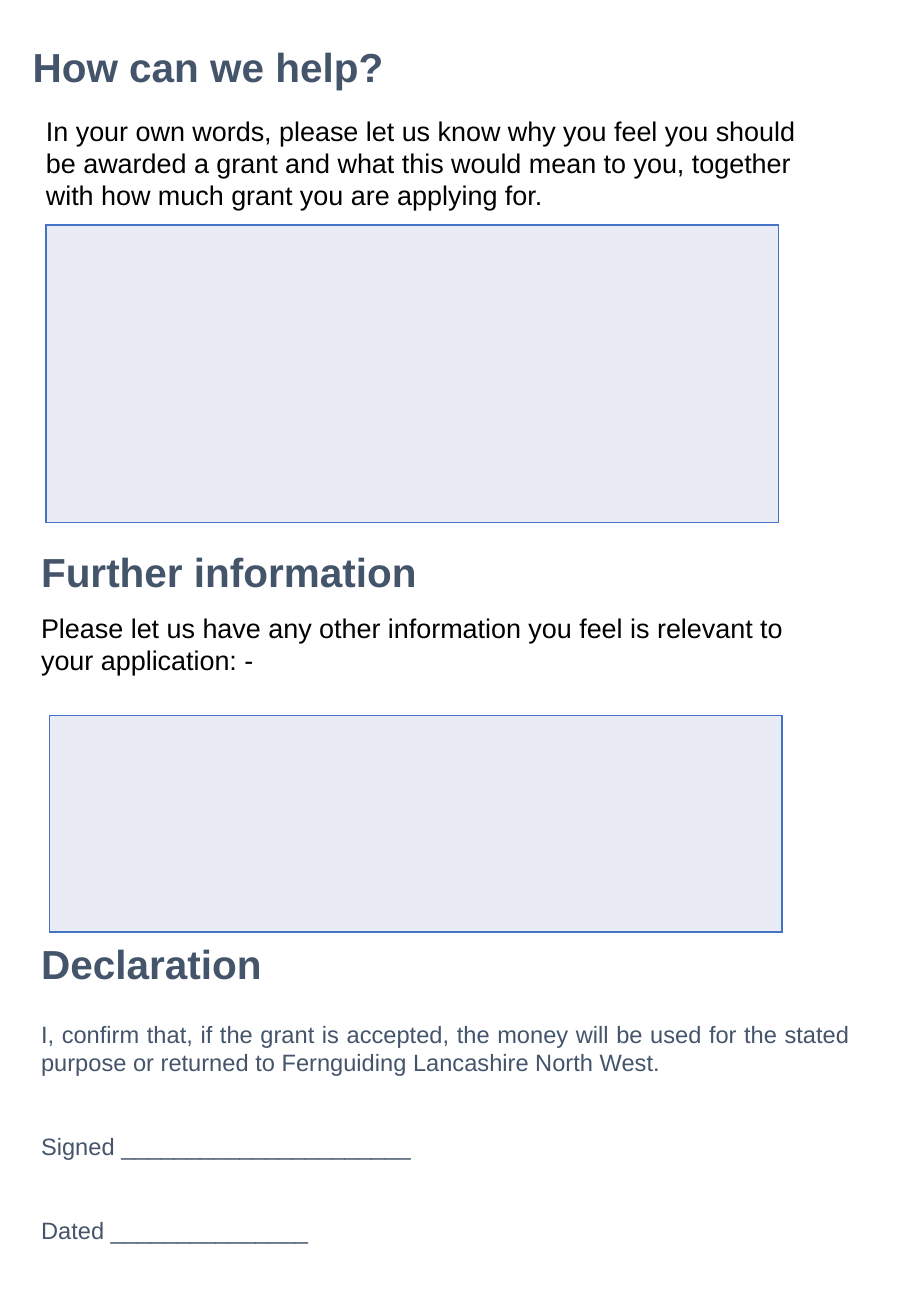
from lxml.etree import SubElement
from pptx import Presentation
from pptx.dml.color import RGBColor
from pptx.enum.text import MSO_ANCHOR, PP_ALIGN
from pptx.oxml.ns import qn
from pptx.util import Pt

NAVY, BLACK, BLUE, PALE = "44546A", "000000", "4472C4", "E9EBF5"
WIDE = 465.84


def color(hue):
    return RGBColor.from_string(hue)


def write(para, text, size=16, hue=BLACK, bold=False, align=None,
          line=None, before=None):
    run = para.add_run()
    run.text = text
    font = run.font
    font.name, font.size, font.bold = "Arial", Pt(size), bold
    font.color.rgb = color(hue)
    if align is not None:
        para.alignment = align
    if line is not None:
        para.line_spacing = line
    if before is not None:
        para.space_before = Pt(before)


class Form:
    def __init__(self, deck):
        self.slide = deck.slides.add_slide(deck.slide_layouts[6])

    def text(self, left, top, wide, high, lines, anchor=MSO_ANCHOR.TOP,
             gap=None, **style):
        box = self.slide.shapes.add_textbox(Pt(left), Pt(top), Pt(wide), Pt(high))
        frame = box.text_frame
        frame.word_wrap = True
        frame.vertical_anchor = anchor
        for i, line in enumerate(lines):
            para = frame.add_paragraph() if i else frame.paragraphs[0]
            write(para, line, before=gap if i else None, **style)

    def title(self, left, top, text):
        self.text(left, top, WIDE, 46.08, [text], anchor=MSO_ANCHOR.MIDDLE,
                  size=24, hue=NAVY, bold=True, line=0.9)

    def field(self, left, top, high):
        wide = 434.16
        table = self.slide.shapes.add_table(
            1, 1, Pt(left), Pt(top), Pt(wide), Pt(high)).table
        table.first_row = table.horz_banding = False
        cell = table.cell(0, 0)
        # Borders come before the fill in the cell's XML
        props = cell._tc.get_or_add_tcPr()
        for side in ("lnL", "lnR", "lnT", "lnB"):
            edge = SubElement(props, qn("a:" + side), w=str(Pt(1)))
            fill = SubElement(edge, qn("a:solidFill"))
            SubElement(fill, qn("a:srgbClr"), val=BLUE)
        cell.fill.solid()
        cell.fill.fore_color.rgb = color(PALE)


def main():
    deck = Presentation()
    deck.slide_width, deck.slide_height = Pt(540), Pt(779.76)
    form = Form(deck)

    # Reason for the grant
    form.title(12.24, 18, "How can we help?")
    form.text(20.16, 64.08, WIDE, 65.52, [
        "In your own words, please let us know why you feel you should be "
        "awarded a grant and what this would mean to you, together with how "
        "much grant you are applying for."])
    form.field(27.36, 133.2, 176.4)

    # Further information
    form.title(17.28, 317.52, "Further information")
    form.text(17.28, 358.56, WIDE, 46.08, [
        "Please let us have any other information you feel is relevant to "
        "your application: -"])
    form.field(29.52, 424.08, 128.16)

    # Declaration and signature
    form.title(17.28, 549.36, "Declaration")
    form.text(17.28, 600.74, 493.92, 143.74, [
        "I, confirm that, if the grant is accepted, the money will be used "
        "for the stated purpose or returned to Fernguiding Lancashire North "
        "West.",
        "Signed " + "_" * 22,
        "Dated " + "_" * 15,
    ], gap=33, size=14, hue=NAVY, align=PP_ALIGN.JUSTIFY)

    deck.save("out.pptx")


if __name__ == "__main__":
    main()
